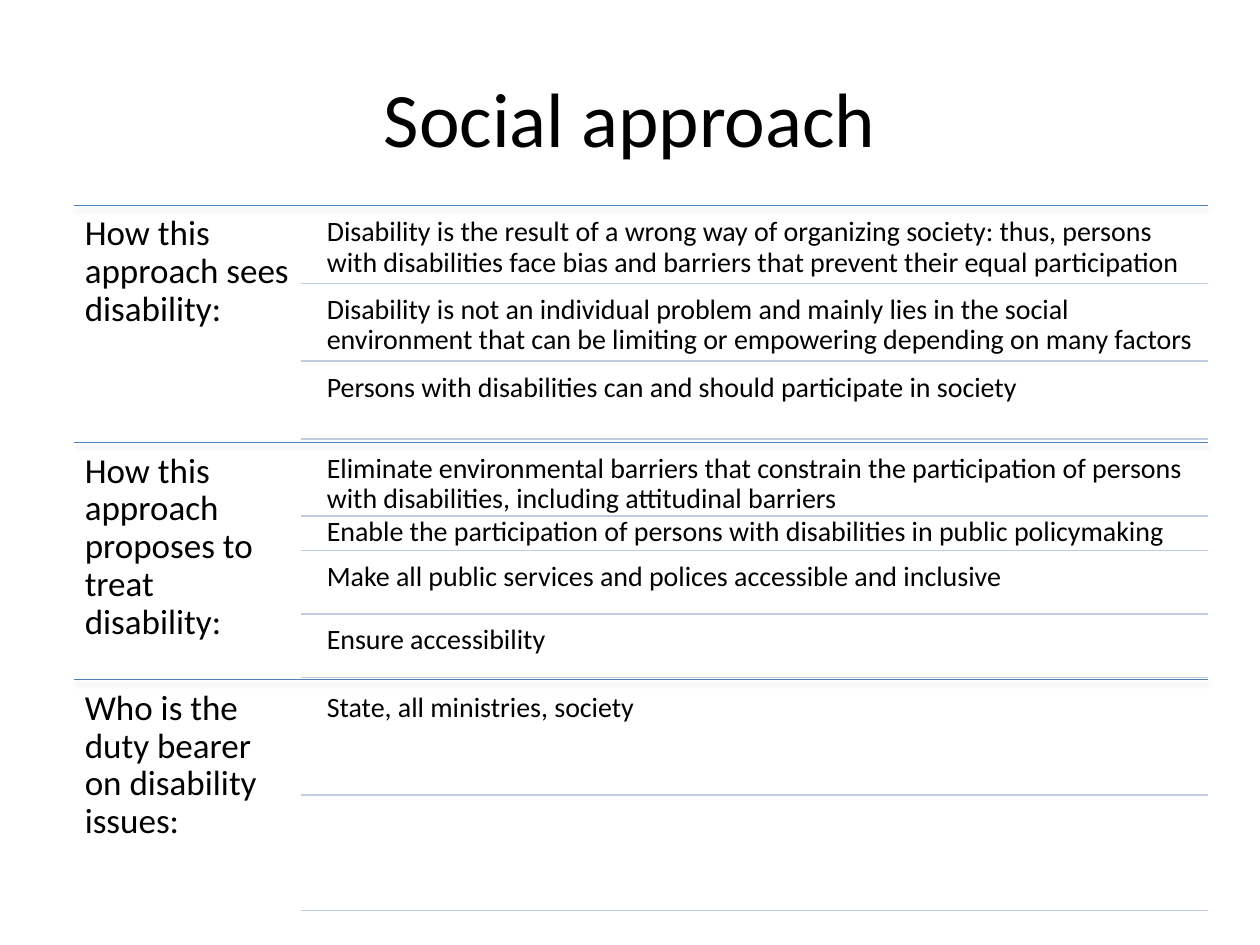
from lxml import etree
from pptx import Presentation
from pptx.dml.color import RGBColor
from pptx.enum.shapes import MSO_CONNECTOR
from pptx.enum.text import MSO_ANCHOR, PP_ALIGN
from pptx.oxml.ns import qn
from pptx.util import Cm, Pt

STRAIGHT = MSO_CONNECTOR.STRAIGHT
TOP, MIDDLE = MSO_ANCHOR.TOP, MSO_ANCHOR.MIDDLE
LEFT, CENTER = PP_ALIGN.LEFT, PP_ALIGN.CENTER

TITLE = {"size": 44, "inset": 0.2, "anchor": MIDDLE, "align": CENTER, "spacing": 1}
QUESTION = {"size": 20, "inset": 0.21, "anchor": TOP, "align": LEFT, "spacing": 0.9}
ANSWER = {"size": 16, "inset": 0.17, "anchor": TOP, "align": LEFT, "spacing": 0.9}
SECTION_RULE = {"color": "4F81BD", "dist": 23000, "alpha": 35000}
ANSWER_RULE = {"color": "C2CDE1", "dist": 20000, "alpha": 38000}

SECTION_LEFT, SECTION_TOP = 1.5, 4.14
SECTION_WIDTH, SECTION_HEIGHT = 22.86, 4.78
QUESTION_WIDTH, ANSWER_INDENT = 4.57, 0.35

SECTIONS = [
    {
        "question": "How this approach sees disability:",
        "gap": 0.08,
        "answers": [
            ("Disability is the result of a wrong way of organizing society: thus, persons "
             "with disabilities face bias and barriers that prevent their equal participation",
             1.49, 0),
            ("Disability is not an individual problem and mainly lies in the social "
             "environment that can be limiting or empowering depending on many factors",
             1.49, 0),
            ("Persons with disabilities can and should participate in society", 1.49, 0),
        ],
    },
    {
        "question": "How this approach proposes to treat disability:",
        "gap": 0.06,
        "answers": [
            ("Eliminate environmental barriers that constrain the participation of persons "
             "with disabilities, including attitudinal barriers", 1.22, 0.2),
            ("Enable the participation of persons with disabilities in public policymaking",
             0.84, 0),
            ("Make all public services and polices accessible and inclusive", 1.22, 0),
            ("Ensure accessibility", 1.22, 0),
        ],
    },
    {
        "question": "Who is the duty bearer on disability issues:",
        "gap": 0.1,
        "answers": [("State, all ministries, society", 2.23, 0), (None, 2.23, 0)],
    },
]


def rgb(value):
    """Turn a hex string into a colour."""
    return RGBColor.from_string(value)


def add_text(slide, text, box, style):
    """Place one paragraph of text in a box given in centimetres."""
    frame = slide.shapes.add_textbox(*map(Cm, box)).text_frame
    inset = Cm(style["inset"])
    frame_format = {
        "word_wrap": True,
        "vertical_anchor": style["anchor"],
        "margin_left": inset,
        "margin_right": inset,
        "margin_top": inset,
        "margin_bottom": inset,
    }
    paragraph = frame.paragraphs[0]
    run = paragraph.add_run()
    run.text = text
    formats = [
        (frame, frame_format),
        (paragraph, {"alignment": style["align"], "line_spacing": style["spacing"]}),
        (run.font, {"name": "Calibri", "size": Pt(style["size"])}),
    ]
    for target, values in formats:
        for name, value in values.items():
            setattr(target, name, value)
    run.font.color.rgb = rgb("000000")


def add_rule(slide, left, right, y, style):
    """Draw a horizontal rule with a soft shadow below it."""
    rule = slide.shapes.add_connector(STRAIGHT, Cm(left), Cm(y), Cm(right), Cm(y))
    rule.line.color.rgb = rgb(style["color"])
    rule.line.width = Pt(0.75)
    effects = etree.SubElement(rule._element.spPr, qn("a:effectLst"))
    shadow = etree.SubElement(effects, qn("a:outerShdw"), blurRad="40000",
                              dist=str(style["dist"]), dir="5400000", rotWithShape="0")
    color = etree.SubElement(shadow, qn("a:srgbClr"), val="000000")
    etree.SubElement(color, qn("a:alpha"), val=str(style["alpha"]))


def add_section(slide, section, box):
    """Place a question on the left and its ruled answers on the right."""
    left, top, width, height = box
    right = left + width
    answers_left = left + QUESTION_WIDTH
    text_left = answers_left + ANSWER_INDENT
    add_rule(slide, left, right, top, SECTION_RULE)
    add_text(slide, section["question"], (left, top, QUESTION_WIDTH, height), QUESTION)
    y = top
    for answer, answer_height, rule_drop in section["answers"]:
        y += section["gap"]
        if answer:
            add_text(slide, answer, (text_left, y, right - text_left, answer_height), ANSWER)
        y += answer_height
        add_rule(slide, answers_left, right, y + rule_drop, ANSWER_RULE)


def main():
    """Build the slide and save it."""
    deck = Presentation()
    deck.slide_width, deck.slide_height = Cm(25.4), Cm(19.05)
    slide = deck.slides.add_slide(deck.slide_layouts[6])
    add_text(slide, "Social approach", (1.27, 0.76, 22.86, 3.18), TITLE)
    for index, section in enumerate(SECTIONS):
        top = SECTION_TOP + index * SECTION_HEIGHT
        add_section(slide, section, (SECTION_LEFT, top, SECTION_WIDTH, SECTION_HEIGHT))
    deck.save("out.pptx")


if __name__ == "__main__":
    main()
